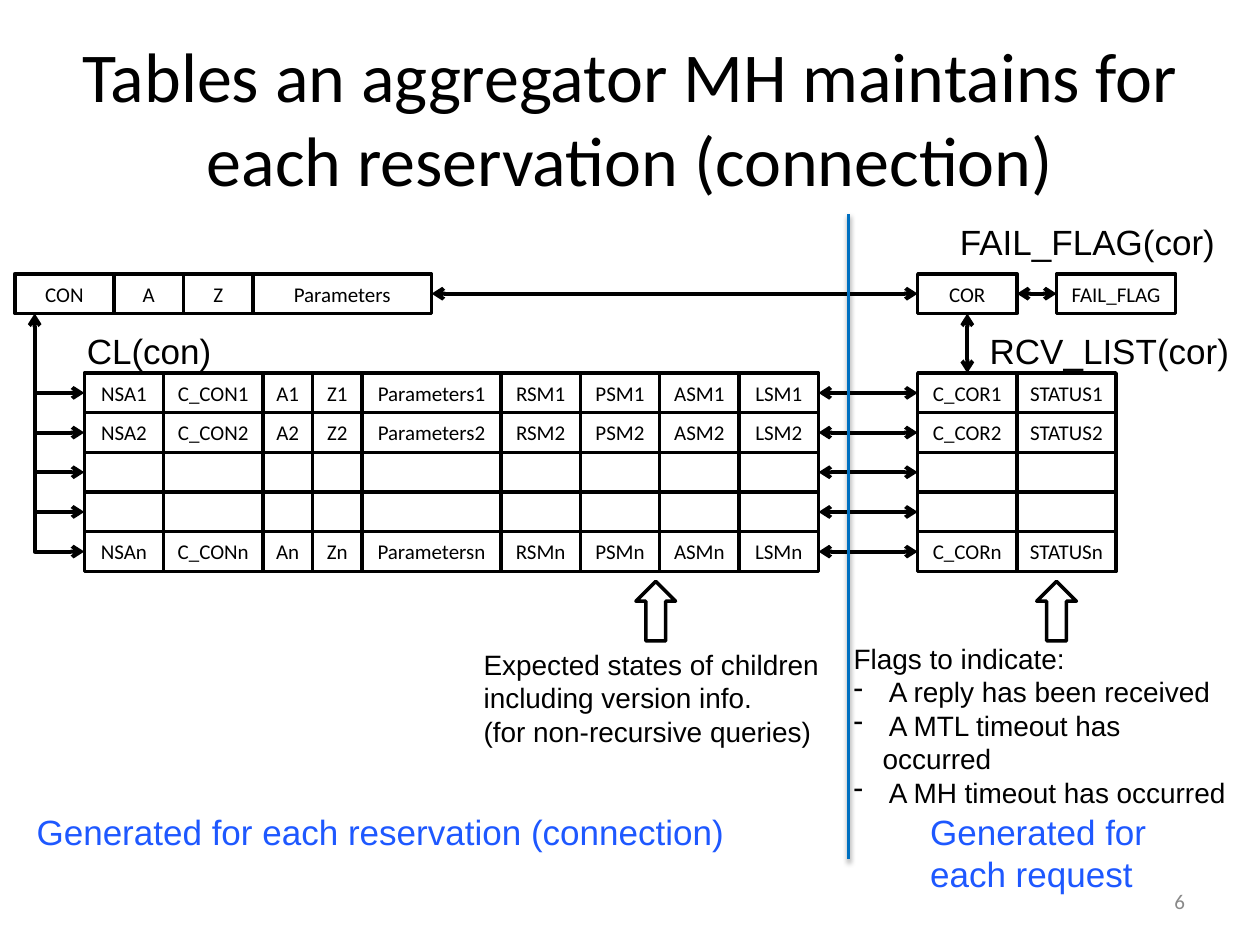
from lxml.etree import SubElement
from pptx import Presentation
from pptx.dml.color import RGBColor
from pptx.enum.shapes import MSO_CONNECTOR as Link, MSO_SHAPE as Shape
from pptx.enum.text import MSO_ANCHOR as Anchor, MSO_AUTO_SIZE as Fit, PP_ALIGN as Align
from pptx.oxml.ns import qn
from pptx.util import Inches, Mm, Pt

STEP = Mm(2)
LEFT, TOP = Mm(3), Mm(55.2)
ROW = 4
CAPTION_ROW = 53.5
SUFFIXES = ["1", "2", "", "", "n"]
BLACK, WHITE, BLUE, GREY = "000000", "FFFFFF", "1E58FF", "898989"
TOP_SIDE, LEFT_SIDE, BOTTOM_SIDE, RIGHT_SIDE = range(4)


def color(value):
    """Turn a hex string into a colour."""
    return RGBColor.from_string(value)


def point(col, row):
    """Turn grid columns and rows into a slide position."""
    return int(LEFT + col * STEP), int(TOP + row * STEP)


def area(col, row, cols, rows):
    """Turn a grid box into left, top, width and height."""
    return *point(col, row), int(cols * STEP), int(rows * STEP)


def write(frame, text, size, font, hue=BLACK, align=Align.LEFT):
    """Fill a text frame and format all its runs."""
    frame.text = text
    for paragraph in frame.paragraphs:
        paragraph.alignment = align
        for run in paragraph.runs:
            run.font.size, run.font.name = Pt(size), font
            run.font.color.rgb = color(hue)


def outlined(slide, preset, box):
    """Draw a white shape with a black outline."""
    shape = slide.shapes.add_shape(preset, *area(*box))
    shape.shadow.inherit = False
    shape.fill.solid()
    shape.fill.fore_color.rgb = color(WHITE)
    shape.line.color.rgb = color(BLACK)
    shape.line.width = Pt(2)
    return shape


def record(slide, col, row, fields):
    """Draw a row of touching cells from (text, width) pairs."""
    cells = []
    for text, width in fields:
        cell = outlined(slide, Shape.RECTANGLE, (col, row, width, ROW))
        frame = cell.text_frame
        frame.margin_left = frame.margin_right = 0
        frame.word_wrap, frame.vertical_anchor = False, Anchor.MIDDLE
        write(frame, text, 12, "Calibri", align=Align.CENTER)
        cells.append(cell)
        col += width
    return cells


def table(slide, col, row, fields):
    """Stack one record for each suffix."""
    return [record(slide, col, row + ROW * i,
                   [(name + suffix if suffix else "", width) for name, width in fields])
            for i, suffix in enumerate(SUFFIXES)]


def line(slide, start, end, hue=BLACK, width=2.25, heads=(), kind=Link.STRAIGHT):
    """Draw a connector with open arrowheads at the named ends."""
    link = slide.shapes.add_connector(kind, *point(*start), *point(*end))
    link.line.color.rgb = color(hue)
    link.line.width = Pt(width)
    for end_name in heads:
        SubElement(link.line._get_or_add_ln(), qn(f"a:{end_name}"), type="arrow")
    SubElement(link._element.spPr, qn("a:effectLst"))
    return link


def join(slide, first, first_side, second, second_side):
    """Join two cells with a double arrow."""
    link = line(slide, (0, 0), (1, 1), heads=("headEnd", "tailEnd"))
    link.begin_connect(first, first_side)
    link.end_connect(second, second_side)


def spine(slide, children):
    """Link the connection record to every child row."""
    col, first_row, last_row, end_col = 2, 4, 28, 7
    rise, run = last_row - first_row, end_col - col
    elbow = line(slide, (col, first_row), (end_col, last_row),
                 heads=("headEnd", "tailEnd"), kind=Link.ELBOW)
    middle_col, middle_row = (col + end_col) / 2, (first_row + last_row) / 2
    elbow.left, elbow.top, elbow.width, elbow.height = area(
        middle_col - rise / 2, middle_row - run / 2, rise, run)
    elbow._element.spPr.find(qn("a:prstGeom")).set("prst", "bentConnector2")
    transform = elbow._element.spPr.find(qn("a:xfrm"))
    transform.set("rot", str(270 * 60000))
    transform.set("flipH", "1")
    for i, child in enumerate(children[:-1]):
        row = 10 + ROW * (i + 0.5)
        branch = line(slide, (col, row), (end_col, row), heads=("tailEnd",))
        branch.end_connect(child, LEFT_SIDE)


def label(slide, box, text, size=20, hue=BLACK, font="Arial", align=Align.LEFT):
    """Place unwrapped text in a grid box."""
    frame = slide.shapes.add_textbox(*area(*box)).text_frame
    frame.word_wrap = False
    write(frame, text, size, font, hue, align)
    return frame


def flag_notes(slide, box):
    """Explain the status flags with a dashed list."""
    notes = label(slide, box, "Flags to indicate:\n A reply has been received\n"
                  " A MTL timeout has occurred\n A MH timeout has occurred", 16)
    notes.word_wrap = True
    for paragraph in notes.paragraphs[1:]:
        properties = paragraph._p.get_or_add_pPr()
        properties.set("marL", str(Inches(0.23)))
        properties.set("indent", str(-Inches(0.23)))
        SubElement(properties, qn("a:buChar"), char="-")


def divider(slide, col, first_row, last_row):
    """Separate reservation and request with a shadowed line."""
    rule = line(slide, (col, first_row), (col, last_row), "0070C0", 2)
    effects = rule._element.spPr.find(qn("a:effectLst"))
    shadow = SubElement(effects, qn("a:outerShdw"), blurRad=str(Pt(3.1)),
                        dist=str(Pt(1.6)), dir=str(90 * 60000), rotWithShape="0")
    shade = SubElement(shadow, qn("a:srgbClr"), val=BLACK)
    SubElement(shade, qn("a:alpha"), val="38000")


def heading(slide, width, height):
    """Place the title in shares of the slide size."""
    title = slide.shapes.title
    title.left, title.top = int(width * 0.05), int(height * 0.04)
    title.width, title.height = int(width * 0.9), int(height / 6)
    frame = title.text_frame
    frame.word_wrap, frame.auto_size = True, Fit.NONE
    frame.vertical_anchor = Anchor.MIDDLE
    write(frame, "Tables an aggregator MH maintains for each reservation (connection)",
          40, "Calibri", align=Align.CENTER)


def diagram(slide):
    """Draw the records, the tables and their links."""
    connection = record(slide, 0, 0, [("CON", 10), ("A", 7), ("Z", 7), ("Parameters", 18)])
    children = table(slide, 7, 10, [
        ("NSA", 8), ("C_CON", 10), ("A", 5), ("Z", 5), ("Parameters", 14),
        ("RSM", 8), ("PSM", 8), ("ASM", 8), ("LSM", 8)])
    replies = table(slide, 91, 10, [("C_COR", 10), ("STATUS", 10)])
    request, = record(slide, 91, 0, [("COR", 10)])
    fail_flag, = record(slide, 105, 0, [("FAIL_FLAG", 12)])
    spine(slide, [child[0] for child in children])
    join(slide, connection[-1], RIGHT_SIDE, request, LEFT_SIDE)
    join(slide, request, RIGHT_SIDE, fail_flag, LEFT_SIDE)
    for child, reply in zip(children, replies):
        join(slide, child[-1], RIGHT_SIDE, reply[0], LEFT_SIDE)
    line(slide, (96, 4), (96, 10), heads=("headEnd", "tailEnd")).begin_connect(
        request, BOTTOM_SIDE)


def annotations(slide):
    """Add the captions, notes and pointers around the tables."""
    label(slide, (6, 5, 15.2, 5.6), "CL(con)")
    label(slide, (97, 5, 27, 5.6), "RCV_LIST(cor)")
    label(slide, (94, -6, 28.5, 5.6), "FAIL_FLAG(cor)")
    for col in (62.6, 103):
        outlined(slide, Shape.UP_ARROW, (col, 31, 4, 6))
    flag_notes(slide, (83.3, 36.4, 40.2, 15))
    divider(slide, 84, -6, 59)
    label(slide, (0.4, CAPTION_ROW, 72.4, 5.6),
          "Generated for each reservation (connection)", hue=BLUE, align=Align.RIGHT)
    label(slide, (91, CAPTION_ROW, 25.5, 9.8), "Generated for\neach request", hue=BLUE)
    label(slide, (46, 37, 36.8, 11.6), "Expected states of children\n"
          "including version info.\n(for non-recursive queries)", 16)
    page = label(slide, (89.6, 60.7, 29.6, 5), "6", 12, GREY, "Calibri", Align.RIGHT)
    page.word_wrap, page.vertical_anchor = True, Anchor.MIDDLE


def main():
    """Build and save the slide."""
    deck = Presentation()
    deck.slide_width, deck.slide_height = Inches(10), Inches(7.5)
    slide = deck.slides.add_slide(deck.slide_layouts[5])
    heading(slide, deck.slide_width, deck.slide_height)
    diagram(slide)
    annotations(slide)
    deck.save("out.pptx")


if __name__ == "__main__":
    main()
